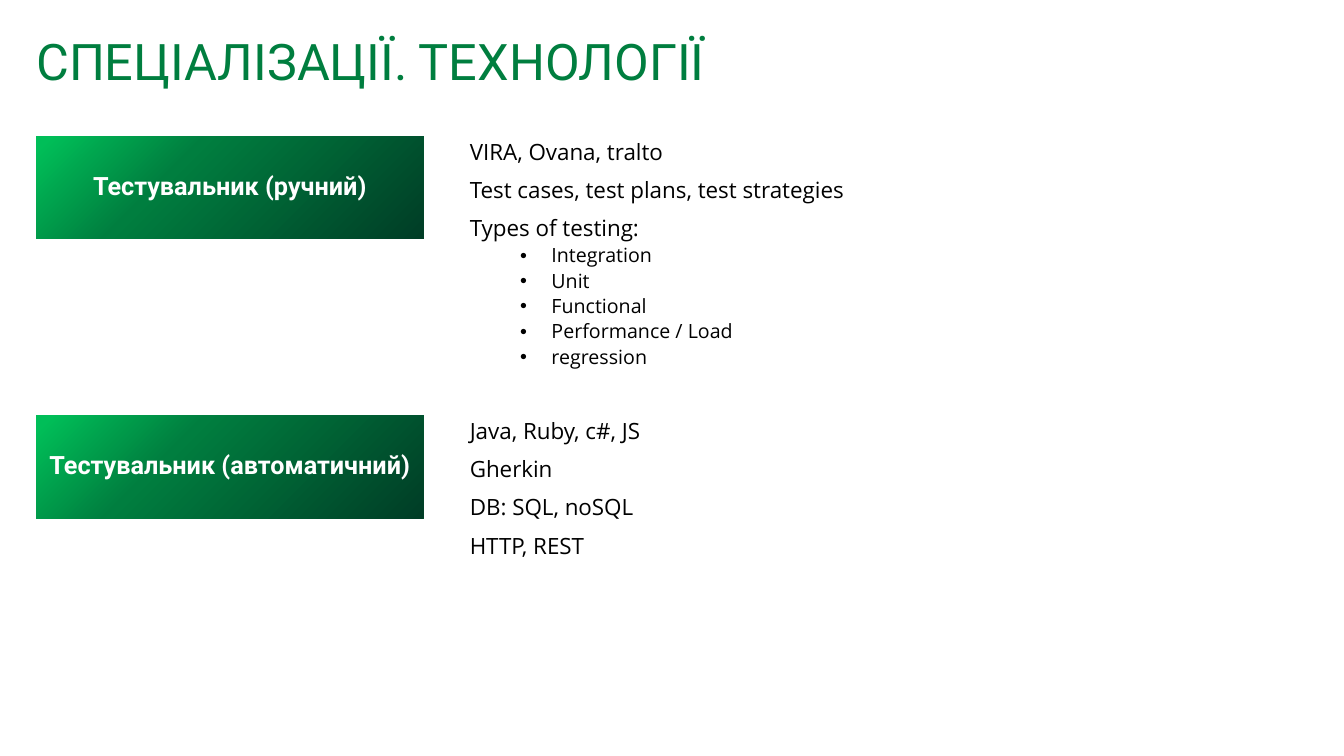
from dataclasses import dataclass
from pptx import Presentation
from pptx.dml.color import RGBColor as Rgb
from pptx.enum.shapes import MSO_SHAPE as Shape
from pptx.enum.text import MSO_ANCHOR as Anchor, PP_ALIGN as Align
from pptx.oxml import parse_xml
from pptx.oxml.ns import nsdecls, qn
from pptx.util import Inches, Pt

TITLE = "СПЕЦІАЛІЗАЦІЇ. ТЕХНОЛОГІЇ"
ROLES = [
    ("Тестувальник (ручний)", 2.58, [
        (0, "VIRA, Ovana, tralto"),
        (0, "Test cases, test plans, test strategies"),
        (0, "Types of testing:"),
        (1, "Integration"),
        (1, "Unit"),
        (1, "Functional"),
        (1, "Performance / Load"),
        (1, "regression"),
    ]),
    ("Тестувальник (автоматичний)", 2.41, [
        (0, "Java, Ruby, c#, JS"),
        (0, "Gherkin"),
        (0, "DB: SQL, noSQL"),
        (0, "HTTP, REST"),
    ]),
]


@dataclass(frozen=True)
class Theme:
    """Colours, fonts and type sizes of the slide."""
    green: str = "007E3F"
    white: str = "FFFFFF"
    black: str = "000000"
    stops: tuple = ((0, "003D26"), (65, "007E3F"), (97, "00BE58"))
    head: str = "Roboto"
    body: str = "Open Sans"
    big: int = 36
    role: int = 18
    sizes: tuple = (16, 14)
    gaps: tuple = (10, 3)


LOOK = Theme()
LEFT, TOP, STEP = 0.36, 1.35, 2.77
ROLE_W, ROLE_H = 3.84, 1.02
LIST_X, LIST_W = 4.66, 8.26


def write(para, text, font, size, color, bold=False, align=Align.LEFT,
          line=0.9, gap=0, bullet=False):
    """Fill one paragraph with formatted text."""
    if bullet:
        props = para._p.get_or_add_pPr()
        props.set("marL", str(Inches(0.81)))
        props.set("indent", str(Inches(-0.31)))
        props.append(parse_xml(f'<a:buFont {nsdecls("a")} typeface="Arial"/>'))
        props.append(parse_xml(f'<a:buChar {nsdecls("a")} char="•"/>'))
    para.alignment = align
    para.line_spacing = line
    para.space_before = Pt(gap)
    run = para.add_run()
    run.text = text
    run.font.name = font
    run.font.size = Pt(size)
    run.font.bold = bold
    run.font.color.rgb = Rgb.from_string(color)


def setup(frame, anchor=Anchor.TOP):
    """Set the wrapping, insets and anchor of a text frame."""
    frame.word_wrap = True
    frame.margin_left = 0
    frame.margin_right = Inches(0.1)
    frame.margin_top = frame.margin_bottom = Inches(0.05)
    frame.vertical_anchor = anchor


def shade(shape):
    """Give a shape the green gradient that spreads from its lower right."""
    shape.fill.gradient()
    props = shape._element.spPr
    stops = "".join(f'<a:gs pos="{pos * 1000}"><a:srgbClr val="{color}"/></a:gs>'
                    for pos, color in LOOK.stops)
    grad = parse_xml(
        f'<a:gradFill {nsdecls("a")} rotWithShape="1"><a:gsLst>{stops}</a:gsLst>'
        '<a:path path="circle"><a:fillToRect l="100000" t="100000"/></a:path>'
        '</a:gradFill>')
    props.replace(props.find(qn("a:gradFill")), grad)


def add_role(slide, name, top):
    """Draw the green box of one role."""
    box = slide.shapes.add_shape(Shape.RECTANGLE, Inches(LEFT), Inches(top),
                                 Inches(ROLE_W), Inches(ROLE_H))
    box.shadow.inherit = False
    box.line.fill.background()
    shade(box)
    frame = box.text_frame
    frame.word_wrap = True
    frame.vertical_anchor = Anchor.MIDDLE
    write(frame.paragraphs[0], name, LOOK.head, LOOK.role, LOOK.white,
          bold=True, align=Align.CENTER)


def add_list(slide, items, top, height):
    """Write the skills of one role."""
    box = slide.shapes.add_textbox(Inches(LIST_X), Inches(top),
                                   Inches(LIST_W), Inches(height))
    frame = box.text_frame
    setup(frame)
    for num, (level, text) in enumerate(items):
        para = frame.add_paragraph() if num else frame.paragraphs[0]
        para.level = level
        write(para, text, LOOK.body, LOOK.sizes[level], LOOK.black,
              gap=LOOK.gaps[level] if num else 0, bullet=level > 0)


def main():
    """Build the slide and save it."""
    deck = Presentation()
    deck.slide_width, deck.slide_height = Inches(13.33), Inches(7.5)
    slide = deck.slides.add_slide(deck.slide_layouts[5])
    title = slide.shapes.title
    title.left, title.top = Inches(LEFT), Inches(0.36)
    title.width, title.height = Inches(12.56), Inches(0.62)
    setup(title.text_frame, Anchor.MIDDLE)
    write(title.text_frame.paragraphs[0], TITLE, LOOK.head, LOOK.big,
          LOOK.green, line=0.7)
    for num, (name, height, items) in enumerate(ROLES):
        top = TOP + num * STEP
        add_list(slide, items, top, height)
        add_role(slide, name, top)
    deck.save("out.pptx")


if __name__ == "__main__":
    main()
